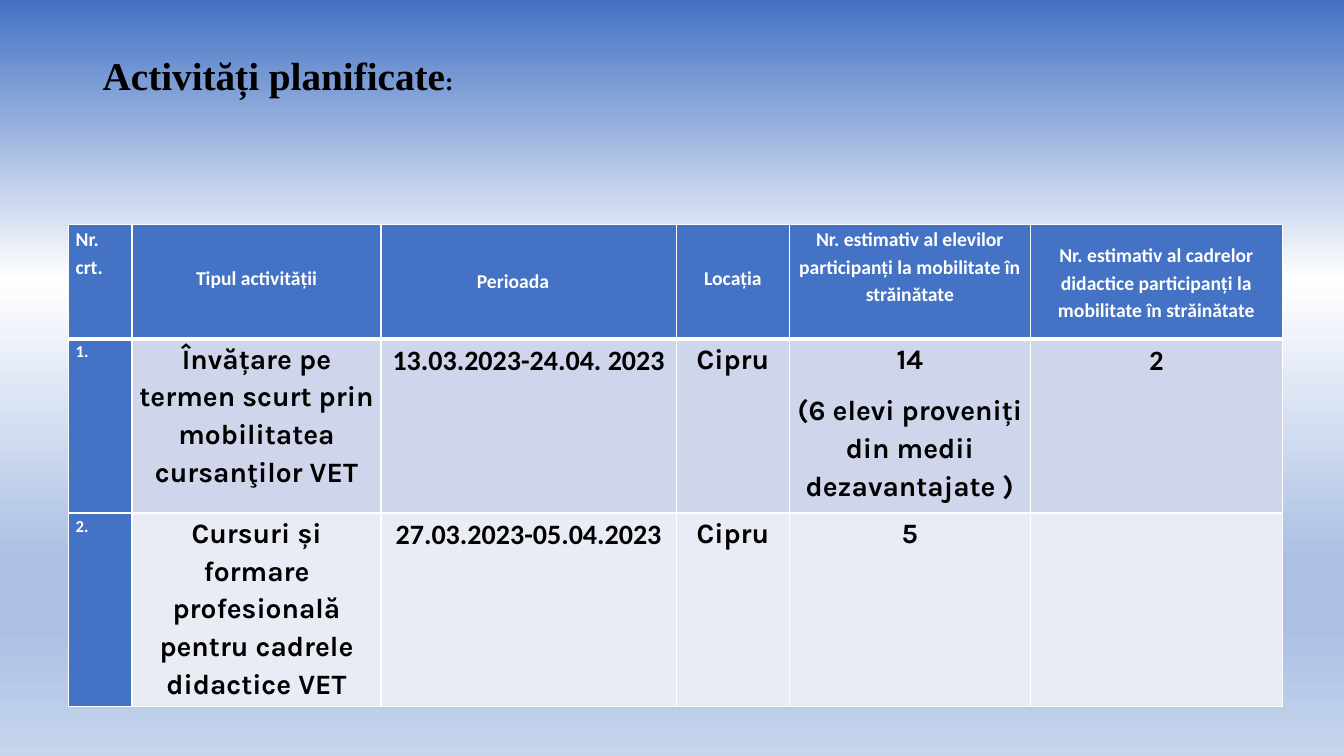
import copy

import pptx
import pptx.dml.color
import pptx.enum.text
import pptx.oxml
import pptx.oxml.ns
import pptx.util

RGB = pptx.dml.color.RGBColor
Inches, Pt = pptx.util.Inches, pptx.util.Pt
Align, Anchor = pptx.enum.text.PP_ALIGN, pptx.enum.text.MSO_ANCHOR
qn = pptx.oxml.ns.qn

BLACK = RGB(0x00, 0x00, 0x00)
WHITE = RGB(0xFF, 0xFF, 0xFF)
BLUE = RGB(0x44, 0x72, 0xC4)
BANDS = [RGB(0xCF, 0xD5, 0xEA), RGB(0xE9, 0xEB, 0xF5)]
SKY = [(0, BLUE), (37, WHITE), (74, RGB(0xAB, 0xC0, 0xE4)),
       (83, RGB(0xAB, 0xC0, 0xE4)), (100, RGB(0xC7, 0xD5, 0xED))]

COLS = [0.63, 2.47, 2.93, 1.12, 2.39, 2.5]
ROWS = [1.13, 1.73, 1.86]
HEADS = ["Nr. crt.", "Tipul activității", "Perioada", "Locația",
         "Nr. estimativ al elevilor participanți la mobilitate în străinătate",
         "Nr. estimativ al cadrelor didactice participanți la mobilitate "
         "în străinătate"]
PLANS = [
    ["1.", "Învățare pe termen scurt prin mobilitatea cursanţilor VET",
     "13.03.2023-24.04. 2023", "Cipru",
     "14\n(6 elevi proveniți din medii dezavantajate )", "2"],
    ["2.", "Cursuri și formare profesională pentru cadrele didactice VET",
     "27.03.2023-05.04.2023", "Cipru", "5", ""],
]
FACES = ["Calibri", "Karla", "Calibri", "Karla", "Karla", "Calibri"]


def paint(slide):
    """Fill the background with the vertical gradient."""
    fill = slide.background.fill
    fill.gradient()
    fill.gradient_angle = 270
    stops = next(slide.element.iter(qn("a:gsLst")))
    for _ in SKY[2:]:
        stops.append(copy.deepcopy(stops[-1]))
    for stop, (share, color) in zip(fill.gradient_stops, SKY):
        stop.position = share / 100
        stop.color.rgb = color


def add_title(slide, left, top, width, height):
    frame = slide.shapes.add_textbox(
        Inches(left), Inches(top), Inches(width), Inches(height)).text_frame
    frame.word_wrap = True
    frame.margin_top = Inches(0.16)
    para = frame.paragraphs[0]
    para.line_spacing = 0.9
    para.font.name = "Times New Roman"
    para.font.bold = True
    para.font.color.rgb = BLACK
    for text, size in [("Activități planificate", 28), (":", 18)]:
        run = para.add_run()
        run.text = text
        run.font.size = Pt(size)


def edge(cell, head):
    """Draw white borders, thicker below the header row."""
    props = cell._tc.get_or_add_tcPr()
    for side in "LRTB":
        thick = head and side == "B"
        props.append(pptx.oxml.parse_xml(
            f'<a:ln{side} {pptx.oxml.ns.nsdecls("a")} w="{Pt(3 if thick else 1)}">'
            f'<a:solidFill><a:srgbClr val="{WHITE}"/></a:solidFill></a:ln{side}>'))


def write(cell, text, size, face, color, align):
    cell.margin_left = cell.margin_right = Inches(0.07)
    cell.margin_top = cell.margin_bottom = 0
    cell.text = text
    for para in cell.text_frame.paragraphs:
        para.alignment = align
        para.line_spacing = 1.15
        para.space_after = Pt(10)
        para.font.size = Pt(size)
        para.font.name = face
        para.font.bold = True
        para.font.color.rgb = color


def add_plan(slide, left, top):
    """Place the table of planned activities."""
    table = slide.shapes.add_table(
        len(ROWS), len(COLS), Inches(left), Inches(top),
        Inches(sum(COLS)), Inches(sum(ROWS))).table
    for col, width in zip(table.columns, COLS):
        col.width = Inches(width)
    for row, height in zip(table.rows, ROWS):
        row.height = Inches(height)
    for r, texts in enumerate([HEADS] + PLANS):
        for c, text in enumerate(texts):
            cell = table.cell(r, c)
            edge(cell, r == 0)
            dark = r == 0 or c == 0
            cell.fill.solid()
            cell.fill.fore_color.rgb = BLUE if dark else BANDS[r - 1]
            size = 14 if r == 0 else 12 if c == 0 else 20
            write(cell, text, size, "Calibri" if dark else FACES[c],
                  WHITE if dark else BLACK,
                  Align.JUSTIFY if c == 0 else Align.CENTER)
    for c in (1, 2, 3):
        table.cell(0, c).margin_top = Inches(0.38)
    term = table.cell(0, 2)
    term.margin_top, term.margin_left = Inches(0.41), Inches(0.95)
    term.text_frame.paragraphs[0].alignment = Align.LEFT
    table.cell(0, 5).vertical_anchor = Anchor.MIDDLE


def main():
    deck = pptx.Presentation()
    deck.slide_width, deck.slide_height = Inches(13.33), Inches(7.5)
    slide = deck.slides.add_slide(deck.slide_layouts[6])
    paint(slide)
    add_title(slide, 0.92, 0.4, 11.5, 1.45)
    add_plan(slide, 0.68, 2.23)
    deck.save("out.pptx")


if __name__ == "__main__":
    main()
